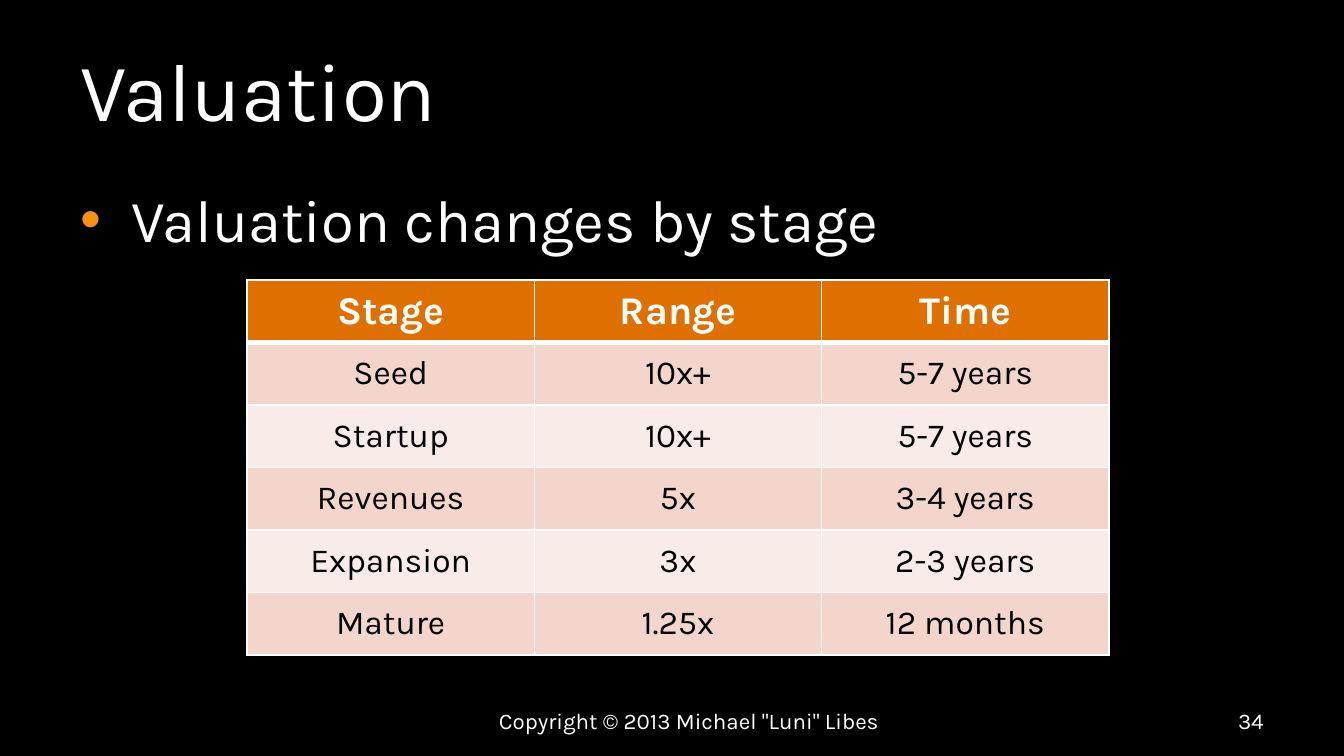
from lxml import etree
from pptx import Presentation
from pptx.dml.color import RGBColor
from pptx.enum.shapes import MSO_SHAPE
from pptx.enum.text import MSO_ANCHOR, PP_ALIGN
from pptx.oxml.ns import qn
from pptx.util import Pt

SCALE = 914400 / 134.4
RECT = MSO_SHAPE.RECTANGLE
LEFT, MID, RIGHT = PP_ALIGN.LEFT, PP_ALIGN.CENTER, PP_ALIGN.RIGHT
TOP, CORE = MSO_ANCHOR.TOP, MSO_ANCHOR.MIDDLE
FONT = "Karla"
HUES = {"back": "000000", "text": "FFFFFF", "dot": "F49014", "ink": "000000",
        "head": "DF7000", "odd": "F3D5CC", "even": "F9EBE7", "line": "FFFFFF"}
BANDS = [(0, 688, 1344, 68), (0, 0, 1344, 160), (0, 0, 1344, 756)]
ROWS = [
    ("Stage", "Range", "Time"),
    ("Seed", "10x+", "5-7 years"),
    ("Startup", "10x+", "5-7 years"),
    ("Revenues", "5x", "3-4 years"),
    ("Expansion", "3x", "2-3 years"),
    ("Mature", "1.25x", "12 months"),
]


def px(size):
    """Turn pixels into EMU."""
    return round(size * SCALE)


def paint(fill, hue):
    """Fill with one solid colour."""
    fill.solid()
    fill.fore_color.rgb = RGBColor.from_string(HUES[hue])


def add_band(slide, box):
    """Add a plain backdrop panel."""
    band = slide.shapes.add_shape(RECT, *map(px, box))
    band.shadow.inherit = False
    band.line.fill.background()
    paint(band.fill, "back")


def style(para, size, hue="text", align=LEFT, bold=False):
    """Set the look of a paragraph."""
    para.alignment = align
    look = {"name": FONT, "size": Pt(size), "bold": bold}
    for name, value in look.items():
        setattr(para.runs[0].font, name, value)
    para.runs[0].font.color.rgb = RGBColor.from_string(HUES[hue])


def add_text(slide, box, text, size, align=LEFT, anchor=CORE):
    """Add a text box and return its paragraph."""
    frame = slide.shapes.add_textbox(*map(px, box)).text_frame
    frame.word_wrap = True
    frame.vertical_anchor = anchor
    para = frame.paragraphs[0]
    para.text = text
    style(para, size, align=align)
    return para


def add_dot(para, indent):
    """Give a paragraph a coloured bullet."""
    para.space_after = Pt(7)
    props = para._p.get_or_add_pPr()
    props.set("marL", str(px(indent)))
    props.set("indent", str(-px(indent)))
    tint = etree.SubElement(props, qn("a:buClr"))
    etree.SubElement(tint, qn("a:srgbClr"), val=HUES["dot"])
    etree.SubElement(props, qn("a:buFont"), typeface="Arial")
    etree.SubElement(props, qn("a:buChar"), char="•")


def add_edge(cell, side, width):
    """Draw one border of a cell."""
    props = cell._tc.get_or_add_tcPr()
    line = etree.SubElement(props, qn(f"a:ln{side}"), w=str(Pt(width)))
    fill = etree.SubElement(line, qn("a:solidFill"))
    etree.SubElement(fill, qn("a:srgbClr"), val=HUES["line"])


def add_grid(slide, box, rows):
    """Add the table of stages."""
    grid = slide.shapes.add_table(len(rows), len(rows[0]), *map(px, box)).table
    frame = {"vertical_anchor": CORE, "margin_left": px(13), "margin_right": px(13),
             "margin_top": px(6), "margin_bottom": px(6)}
    for i, row in enumerate(rows):
        head = i == 0
        hue = "head" if head else "odd" if i % 2 else "even"
        edges = {"L": 1, "R": 1, "T": 3 if i == 1 else 1, "B": 3 if head else 1}
        for j, text in enumerate(row):
            cell = grid.cell(i, j)
            cell.text = text
            for name, value in frame.items():
                setattr(cell, name, value)
            for side, width in edges.items():
                add_edge(cell, side, width)
            paint(cell.fill, hue)
            style(cell.text_frame.paragraphs[0], 21 if head else 18,
                  "text" if head else "ink", MID, head)


def main():
    """Build and save the slide."""
    deck = Presentation()
    deck.slide_width, deck.slide_height = px(1344), px(756)
    slide = deck.slides.add_slide(deck.slide_layouts[6])
    for box in BANDS:
        add_band(slide, box)
    point = add_text(slide, (67, 176, 1210, 499), "Valuation changes by stage", 32, anchor=TOP)
    add_dot(point, 51)
    add_text(slide, (437, 701, 504, 40), 'Copyright © 2013 Michael "Luni" Libes', 12, MID)
    add_text(slide, (964, 701, 313, 40), "34", 12, RIGHT)
    add_text(slide, (67, 26, 1210, 126), "Valuation", 44)
    add_grid(slide, (247, 280, 862, 375), ROWS)
    deck.save("out.pptx")


if __name__ == "__main__":
    main()
